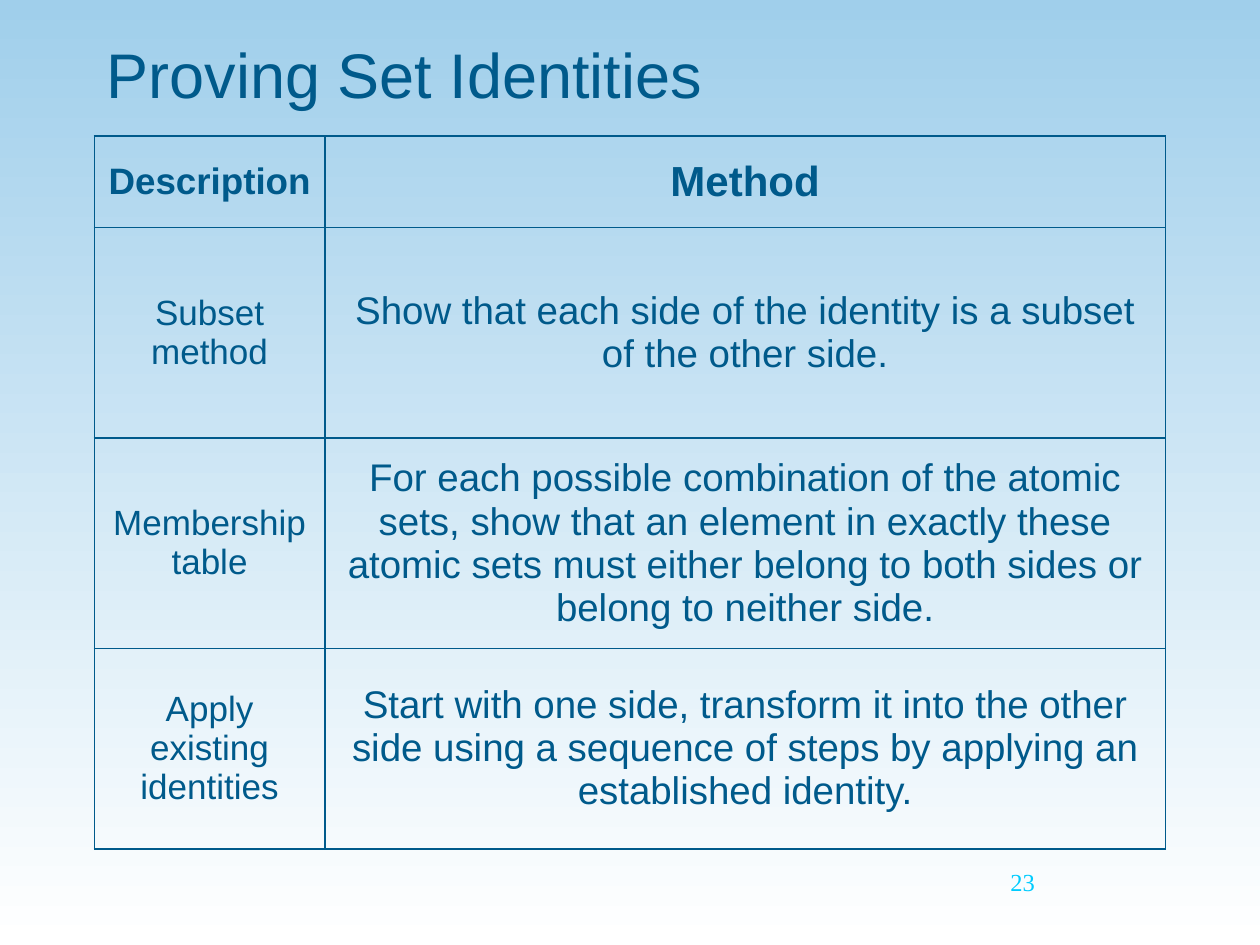
from lxml import etree
from pptx import Presentation
from pptx.dml.color import RGBColor
from pptx.enum.text import MSO_ANCHOR, PP_ALIGN
from pptx.oxml.ns import qn
from pptx.util import Cm, Pt

TOP, MID = MSO_ANCHOR.TOP, MSO_ANCHOR.MIDDLE
LEFT, CENTER = PP_ALIGN.LEFT, PP_ALIGN.CENTER
TITLE_ONLY = 5
HUES = {"sky": "A0CFEB", "white": "FFFFFF", "ink": "005A8B", "page": "00CCFF"}
EDGES = ("a:lnL", "a:lnR", "a:lnT", "a:lnB")

COLS = (4.65, 16.94)
HEIGHTS = (1.85, 4.24, 4.24, 4.04)
ROWS = (
    ("Description", "Method"),
    ("Subset method",
     "Show that each side of the identity is a subset of the other side."),
    ("Membership table",
     "For each possible combination of the atomic sets, show that an element "
     "in exactly these atomic sets must either belong to both sides or belong "
     "to neither side."),
    ("Apply existing identities",
     "Start with one side, transform it into the other side using a sequence "
     "of steps by applying an established identity."),
)
HEAD_SIZES = (21, 24)
BODY_SIZES = (20, 22)


def rgb(name):
    return RGBColor.from_string(HUES[name])


class Deck:
    def __init__(self):
        self.show = Presentation()
        self.show.slide_width, self.show.slide_height = Cm(25.4), Cm(19.05)
        self.slide = self.show.slides.add_slide(
            self.show.slide_layouts[TITLE_ONLY])

    def backdrop(self, *names):
        fill = self.slide.background.fill
        fill.gradient()
        fill.gradient_angle = 270
        for stop, name in zip(fill.gradient_stops, names):
            stop.color.rgb = rgb(name)

    def add_run(self, frame, text, size, hue="ink", face="Arial",
                bold=False, align=LEFT):
        para = frame.paragraphs[0]
        para.alignment = align
        run = para.add_run()
        run.text = text
        font = run.font
        font.name, font.size, font.bold = face, Pt(size), bold
        font.color.rgb = rgb(hue)

    def title(self, text, box):
        shape = self.slide.shapes.title
        shape.left, shape.top, shape.width, shape.height = map(Cm, box)
        frame = shape.text_frame
        frame.vertical_anchor = TOP
        frame.margin_top = Cm(0.28)
        self.add_run(frame, text, 36)

    def number(self, text, box):
        frame = self.slide.shapes.add_textbox(*map(Cm, box)).text_frame
        frame.word_wrap = True
        self.add_run(frame, text, 14, "page", "Times New Roman")

    def border(self, cell):
        props = cell._tc.get_or_add_tcPr()
        for spot, edge in enumerate(EDGES):
            line = etree.Element(qn(edge), w=str(Pt(1)))
            fill = etree.SubElement(line, qn("a:solidFill"))
            etree.SubElement(fill, qn("a:srgbClr"), val=HUES["ink"])
            props.insert(spot, line)

    def table(self, rows, left, top):
        box = map(Cm, (left, top, sum(COLS), sum(HEIGHTS)))
        grid = self.slide.shapes.add_table(len(rows), len(COLS), *box).table
        grid.first_row = grid.horz_banding = False
        for col, width in zip(grid.columns, COLS):
            col.width = Cm(width)
        for row, height in zip(grid.rows, HEIGHTS):
            row.height = Cm(height)
        for r, texts in enumerate(rows):
            sizes = BODY_SIZES if r else HEAD_SIZES
            for c, (text, size) in enumerate(zip(texts, sizes)):
                cell = grid.cell(r, c)
                cell.fill.background()
                cell.vertical_anchor = MID
                self.border(cell)
                self.add_run(cell.text_frame, text, size,
                             bold=r == 0, align=CENTER)


def main():
    deck = Deck()
    deck.backdrop("sky", "white")
    deck.title("Proving Set Identities", (1.9, 0.43, 21.59, 2.34))
    deck.number("23", (20.12, 17.35, 5.28, 1.27))
    deck.table(ROWS, 1.9, 2.74)
    deck.show.save("out.pptx")


if __name__ == "__main__":
    main()
